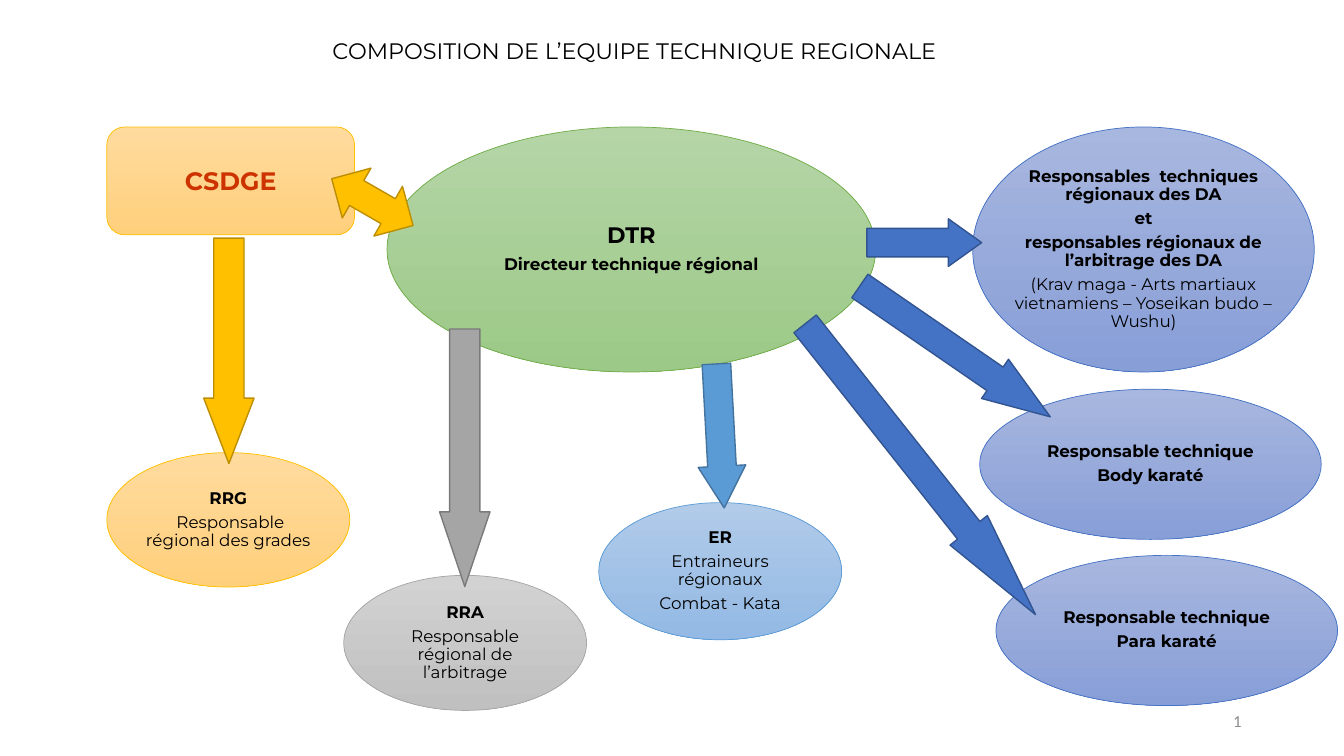
"""Build the slide showing the make-up of the regional technical team."""
import pptx
import pptx.dml.color
import pptx.enum.shapes
import pptx.enum.text
import pptx.util

Pt = pptx.util.Pt
SHAPES = pptx.enum.shapes.MSO_SHAPE
ALIGN = pptx.enum.text.PP_ALIGN
ANCHOR = pptx.enum.text.MSO_ANCHOR

THEME = {
    "font": "Montserrat", "number font": "Calibri",
    "black": "000000", "red": "CC3300", "number": "8C8C8C",
    "body": 12, "heading": 16, "large": 18,
    "gold": {"top": "FFDB9E", "bottom": "FFD07C", "main": "FFC000", "edge": "BD8E00"},
    "green": {"top": "B5D5A7", "bottom": "9CC987", "main": "70AD47"},
    "grey": {"top": "D2D2D2", "bottom": "C0C0C0", "main": "A5A5A5", "edge": "7A7A7A"},
    "sky": {"top": "B1CBE9", "bottom": "93B9E4", "main": "5B9BD5", "edge": "43739E"},
    "blue": {"top": "A8B7DF", "bottom": "889ED7", "main": "4472C4", "edge": "325491"},
}
OVAL_MARGIN = 0.1464
HEAD_SHARE = 0.29


def rgb(code):
    return pptx.dml.color.RGBColor.from_string(code)


def write(frame, lines, align, font=THEME["font"]):
    """Fill a frame with (text, size, bold, colour) lines."""
    frame.word_wrap = True
    frame.text = "\n".join(line[0] for line in lines)
    for para, (_, size, bold, colour) in zip(frame.paragraphs, lines):
        para.alignment = align
        for span in para.runs:
            span.font.name = font
            span.font.size = Pt(size)
            span.font.bold = bold
            span.font.color.rgb = rgb(THEME[colour])


deck = pptx.Presentation()
deck.slide_width, deck.slide_height = Pt(960), Pt(540)
page = deck.slides.add_slide(deck.slide_layouts[5])

title = page.shapes.title
title.left, title.top, title.width, title.height = Pt(0), Pt(23), Pt(902.4), Pt(26.6)
title.text_frame.vertical_anchor = ANCHOR.TOP
write(title.text_frame, [(" COMPOSITION DE L’EQUIPE TECHNIQUE REGIONALE",
                          THEME["heading"], False, "black")], ALIGN.CENTER)

body, heading = THEME["body"], THEME["heading"]
ovals = [
    ("sky", 427.7, 359, 173.5, 98, 24.5,
     [("ER", body, True), ("Entraineurs régionaux", body, False),
      ("Combat - Kata", body, False)]),
    ("green", 276.5, 90.7, 349, 175, 31,
     [("DTR", heading, True), ("Directeur technique régional", body, True)]),
    ("gold", 76.3, 323.3, 173.5, 96, 24.5,
     [("RRG", body, True), (" Responsable régional des grades", body, False)]),
    ("blue", 694.8, 90.7, 244, 175, 24.5,
     [("Responsables  techniques régionaux des DA", body, True), ("et", body, True),
      ("responsables régionaux de l’arbitrage des DA", body, True),
      ("(Krav maga - Arts martiaux vietnamiens – Yoseikan budo – Wushu)", body, False)]),
    ("grey", 245.5, 411, 173.5, 96.5, 24.5,
     [("RRA", body, True), ("Responsable régional de l’arbitrage", body, False)]),
    ("blue", 699.8, 278, 244, 107.3, 24.5,
     [("Responsable technique", body, True), ("Body karaté", body, True)]),
    ("blue", 711.4, 396.7, 244, 107.3, 24.5,
     [("Responsable technique", body, True), ("Para karaté", body, True)]),
]
boxes = []
for tone, left, top, width, height, inset, lines in ovals:
    oval = page.shapes.add_shape(SHAPES.OVAL, Pt(left), Pt(top), Pt(width), Pt(height))
    frame = oval.text_frame
    write(frame, [(*line, "black") for line in lines], ALIGN.CENTER)
    frame.margin_left = frame.margin_right = Pt(inset - OVAL_MARGIN * width)
    frame.margin_top = frame.margin_bottom = 0
    for para, line in zip(frame.paragraphs, lines):
        para.line_spacing = 0.9
        para.space_after = Pt(0.35 * line[1])
    boxes.append((oval, tone))

committee = page.shapes.add_shape(SHAPES.ROUNDED_RECTANGLE, Pt(76.3), Pt(90.7), Pt(177), Pt(77))
write(committee.text_frame, [("CSDGE", THEME["large"], True, "red")], ALIGN.CENTER)
boxes.append((committee, "gold"))

for box, tone in boxes:
    box.shadow.inherit = False
    box.text_frame.vertical_anchor = ANCHOR.MIDDLE
    box.fill.gradient()
    box.fill.gradient_angle = 270
    for stop, end in zip(box.fill.gradient_stops, ("top", "bottom")):
        stop.color.rgb = rgb(THEME[tone][end])
    box.line.color.rgb = rgb(THEME[tone]["main"])
    box.line.width = Pt(0.5)

arrows = [
    ("sky", SHAPES.RIGHT_ARROW, 514.5, 311.4, 103, 34, 86.9),
    ("gold", SHAPES.RIGHT_ARROW, 163.5, 250.6, 161, 36, 90),
    ("gold", SHAPES.LEFT_RIGHT_ARROW, 266, 144.4, 67, 41, 29.9),
    ("grey", SHAPES.RIGHT_ARROW, 332, 327, 184, 36, 90),
    ("blue", SHAPES.RIGHT_ARROW, 660.2, 173.3, 82, 34, 0),
    ("blue", SHAPES.RIGHT_ARROW, 682.2, 251, 165, 34, 34.5),
    ("blue", SHAPES.RIGHT_ARROW, 657.4, 335.2, 265, 34, 51.6),
]
for tone, kind, centre_x, centre_y, length, thickness, angle in arrows:
    arrow = page.shapes.add_shape(kind, Pt(centre_x - length / 2), Pt(centre_y - thickness / 2),
                                  Pt(length), Pt(thickness))
    arrow.rotation = angle
    if kind == SHAPES.RIGHT_ARROW:
        arrow.adjustments[0] = 0.6
        arrow.adjustments[1] = HEAD_SHARE * length / thickness
    arrow.shadow.inherit = False
    arrow.fill.solid()
    arrow.fill.fore_color.rgb = rgb(THEME[tone]["main"])
    arrow.line.color.rgb = rgb(THEME[tone]["edge"])
    arrow.line.width = Pt(1)

number = page.shapes.add_textbox(Pt(678), Pt(500.5), Pt(216), Pt(28.8))
number.text_frame.vertical_anchor = ANCHOR.MIDDLE
write(number.text_frame, [("1", body, False, "number")], ALIGN.RIGHT, THEME["number font"])

deck.save("out.pptx")
